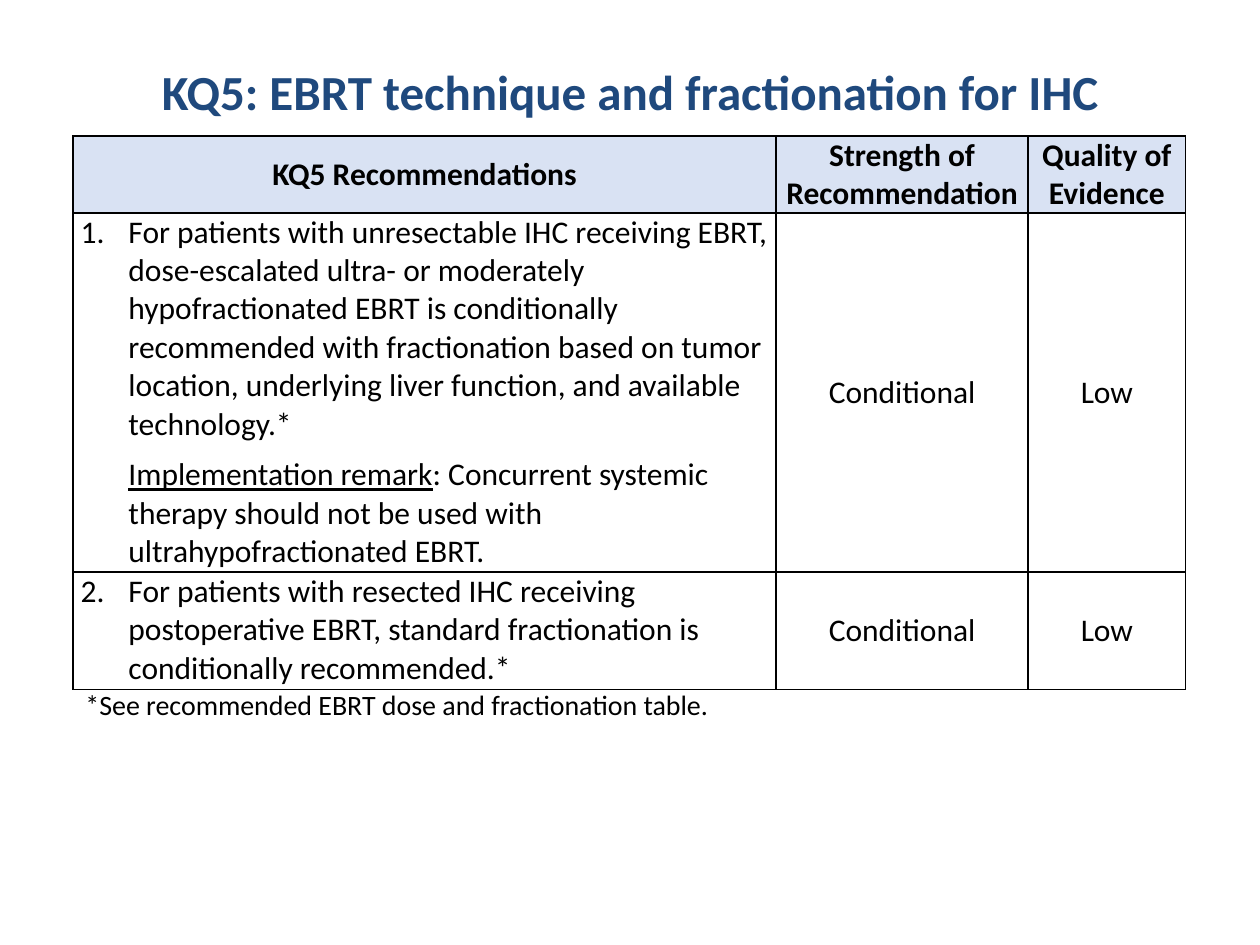
"""Build the KQ5 recommendations slide: title, recommendation table and footnote."""
from lxml.etree import SubElement
from pptx import Presentation
from pptx.dml.color import RGBColor
from pptx.enum.text import MSO_ANCHOR as ANCHOR, PP_ALIGN as ALIGN
from pptx.oxml.ns import qn
from pptx.util import Inches, Pt

TITLE = "KQ5: EBRT technique and fractionation for IHC"
HEADER = ["KQ5 Recommendations", "Strength of\nRecommendation", "Quality of\nEvidence"]
RECOMMENDATIONS = [
    {"text": "For patients with unresectable IHC receiving EBRT, dose-escalated ultra- or "
             "moderately hypofractionated EBRT is conditionally recommended with "
             "fractionation based on tumor location, underlying liver function, and "
             "available technology.*",
     "remark": ("Implementation remark", ": Concurrent systemic therapy should not be "
                "used with ultrahypofractionated EBRT."),
     "ratings": ["Conditional", "Low"]},
    {"text": "For patients with resected IHC receiving postoperative EBRT, standard "
             "fractionation is conditionally recommended.*",
     "ratings": ["Conditional", "Low"]},
]
FOOTNOTE = "*See recommended EBRT dose and fractionation table."

COL_WIDTHS = [5.58, 2, 1.25]
ROW_HEIGHTS = [0.61, 2.85, 0.93]
LEFT, TOP = 0.58, 1.08
INDENT = Inches(0.38)
FONT = "Calibri"
NAVY = RGBColor(0x1F, 0x49, 0x7D)
BLACK = RGBColor(0, 0, 0)
PALE_BLUE = RGBColor(0xD9, 0xE2, 0xF3)


def style(tf, size, color=BLACK, bold=False, align=None):
    for p in tf.paragraphs:
        p.alignment = align
        for r in p.runs:
            r.font.name, r.font.size, r.font.bold = FONT, Pt(size), bold
            r.font.color.rgb = color


def indent(p, hanging, number=None):
    pPr = p._p.get_or_add_pPr()
    pPr.set("marL", str(INDENT))
    pPr.set("indent", str(-INDENT if hanging else 0))
    if number:
        SubElement(pPr, qn("a:buFont"), typeface="+mj-lt")
        SubElement(pPr, qn("a:buAutoNum"), type="arabicPeriod", startAt=str(number))


def add_borders(cell):
    tcPr = cell._tc.get_or_add_tcPr()
    for i, side in enumerate(("lnL", "lnR", "lnT", "lnB")):
        ln = tcPr.makeelement(qn(f"a:{side}"), {"w": str(Pt(1))})
        fill = SubElement(ln, qn("a:solidFill"))
        SubElement(fill, qn("a:srgbClr"), val=str(BLACK))
        tcPr.insert(i, ln)


def format_cell(cell, header=False, centered=True):
    cell.margin_left = cell.margin_right = Inches(0.06)
    cell.margin_top = cell.margin_bottom = 0
    cell.vertical_anchor = ANCHOR.MIDDLE if centered else ANCHOR.TOP
    if header:
        cell.fill.solid()
        cell.fill.fore_color.rgb = PALE_BLUE
    else:
        cell.fill.background()
    add_borders(cell)
    style(cell.text_frame, 18, bold=header, align=ALIGN.CENTER if centered else None)


def fill_recommendation(tf, number, item):
    tf.text = item["text"]
    indent(tf.paragraphs[0], True, number)
    if "remark" in item:
        p = tf.add_paragraph()
        indent(p, False)
        p.space_before = Pt(7)
        for text in item["remark"]:
            p.add_run().text = text
        p.runs[0].font.underline = True


def add_recommendation_table(slide):
    frame = slide.shapes.add_table(len(ROW_HEIGHTS), len(COL_WIDTHS), Inches(LEFT), Inches(TOP),
                                   Inches(sum(COL_WIDTHS)), Inches(sum(ROW_HEIGHTS)))
    table = frame.table
    table.horz_banding = False
    for col, width in zip(table.columns, COL_WIDTHS):
        col.width = Inches(width)
    for row, height in zip(table.rows, ROW_HEIGHTS):
        row.height = Inches(height)
    for c, text in enumerate(HEADER):
        table.cell(0, c).text = text
        format_cell(table.cell(0, c), header=True)
    for n, item in enumerate(RECOMMENDATIONS, 1):
        fill_recommendation(table.cell(n, 0).text_frame, n, item)
        format_cell(table.cell(n, 0), centered=False)
        for c, rating in enumerate(item["ratings"], 1):
            table.cell(n, c).text = rating
            format_cell(table.cell(n, c))


def main():
    prs = Presentation()
    prs.slide_width, prs.slide_height = Inches(10), Inches(7.5)
    slide = prs.slides.add_slide(prs.slide_layouts[5])

    title = slide.shapes.title
    title.left, title.top, title.width, title.height = map(Inches, (0.5, 0.37, 9, 0.7))
    title.text_frame.text = TITLE
    title.text_frame.vertical_anchor = ANCHOR.MIDDLE
    style(title.text_frame, 28, NAVY, True, ALIGN.CENTER)

    add_recommendation_table(slide)

    note = slide.shapes.add_textbox(Inches(LEFT), Inches(5.41), Inches(5.21), Inches(0.67))
    note.text_frame.text = FOOTNOTE
    note.text_frame.word_wrap = False
    style(note.text_frame, 16)

    prs.save("out.pptx")


if __name__ == "__main__":
    main()
